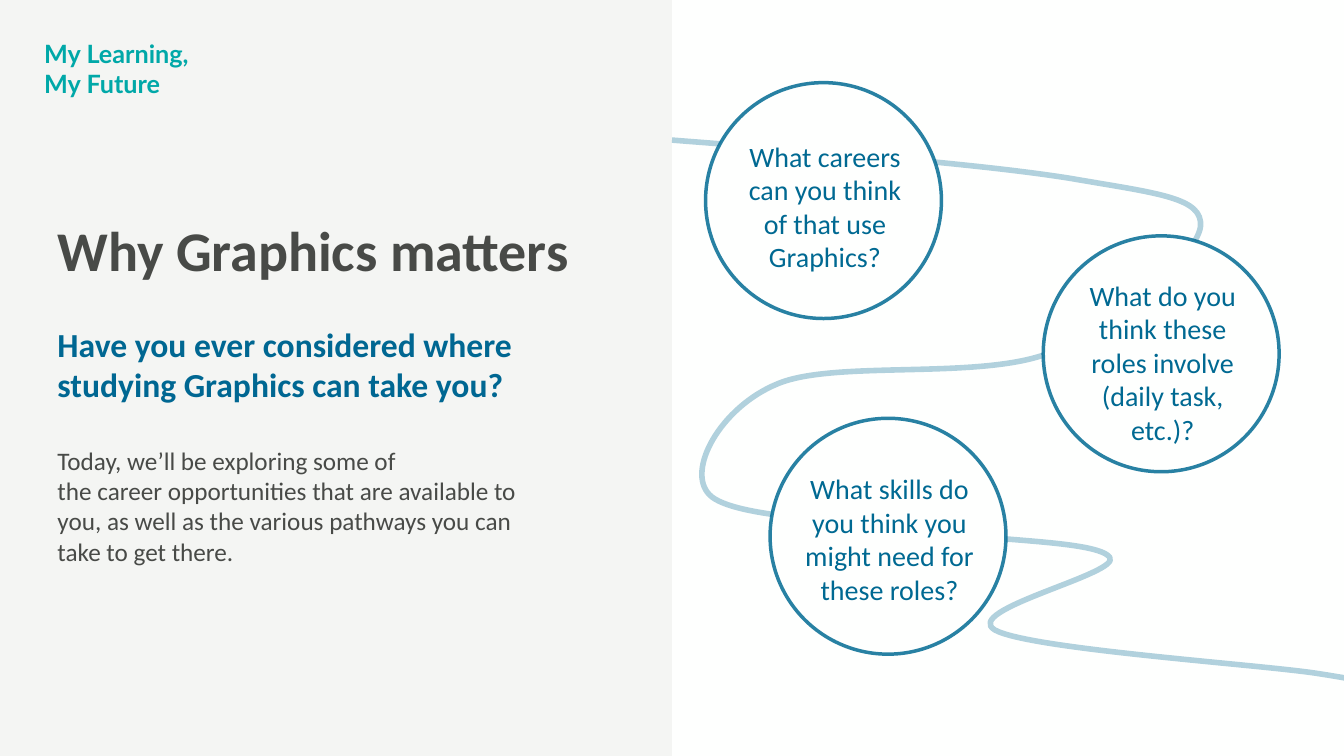
from dataclasses import dataclass

import pptx
import pptx.dml.color
import pptx.enum.shapes
import pptx.enum.text
import pptx.oxml
import pptx.oxml.ns
import pptx.util
from pptx.enum.text import PP_ALIGN


@dataclass(frozen=True)
class Theme:
    paper: str = "FEFFFE"
    panel: str = "E0DEDA"
    teal: str = "00A8A8"
    blue: str = "006992"
    question: str = "006792"
    ink: str = "484A47"
    heading_font: str = "Lato"
    text_font: str = "Calibri"
    title_size: float = 40
    question_size: float = 24
    prompt_size: float = 20
    text_size: float = 18
    body_gap: float = 29.3
    path_width: float = 4
    ring_width: float = 2.5


@dataclass(frozen=True)
class Area:
    """A place on the grid, in columns and rows."""
    left: float
    top: float
    width: float
    height: float


@dataclass(frozen=True)
class Prompt:
    text: str
    ring: Area
    label: Area


@dataclass(frozen=True)
class Bend:
    """A cubic curve: two handles and the end point, as (column, row)."""
    first: tuple[float, float]
    second: tuple[float, float]
    end: tuple[float, float]


THEME = Theme()
COLUMNS, ROWS = 160, 90
CELL = pptx.util.Inches(7.5) / ROWS
RING = 28.08

PROMPTS = [
    Prompt("What careers can you think of that use Graphics?",
           Area(84, 9.84, RING, RING), Area(87.72, 15.96, 21, 17.4)),
    Prompt("What do you think these roles involve (daily task, etc.)?",
           Area(124.2, 28.08, RING, RING), Area(126, 32.52, 24.84, 21.36)),
    Prompt("What skills do you think you might need for these roles?",
           Area(91.68, 49.8, RING, RING), Area(94.32, 55.56, 23.16, 17.4)),
]

PATH_START = (80, 16.68)
BENDS = [
    Bend((98.52, 18.12), (117, 19.56), (127.44, 21.24)),
    Bend((137.88, 23.04), (143.28, 23.52), (142.92, 27)),
    Bend((142.44, 30.48), (133.08, 39), (124.68, 42.12)),
    Bend((116.28, 45.24), (99.24, 42.84), (92.52, 45.72)),
    Bend((85.8, 48.48), (81.6, 56.04), (84.48, 58.92)),
    Bend((87.36, 61.8), (101.88, 61.92), (109.92, 63.12)),
    Bend((117.84, 64.44), (130.68, 64.32), (132.12, 66.36)),
    Bend((133.56, 68.28), (114.36, 72.6), (118.44, 75)),
    Bend((122.52, 77.28), (149.64, 79.08), (156.72, 80.16)),
    Bend((163.8, 81.24), (162.48, 81.36), (161.04, 81.48)),
]


def cells(count: float) -> int:
    return round(count * CELL)


def box(area: Area) -> tuple[int, int, int, int]:
    return cells(area.left), cells(area.top), cells(area.width), cells(area.height)


def rgb(colour: str) -> pptx.dml.color.RGBColor:
    return pptx.dml.color.RGBColor.from_string(colour)


def add_child(parent, tag: str, **attributes: object):
    child = pptx.oxml.ns.qn(tag)
    element = parent.makeelement(child, {key: str(value) for key, value in attributes.items()})
    parent.append(element)
    return element


def set_opacity(shape, percent: int) -> None:
    for colour in shape.element.xpath("./p:spPr//a:srgbClr"):
        if shape.element.xpath("./p:spPr/a:ln") and colour.getparent().getparent().tag != pptx.oxml.ns.qn("a:ln"):
            continue
        add_child(colour, "a:alpha", val=percent * 1000)


def set_line(shape, width: float, opacity: int) -> None:
    shape.line.color.rgb = rgb(THEME.blue)
    shape.line.width = pptx.util.Pt(width)
    set_opacity(shape, opacity)


def write(paragraph, text: str, size: float, colour: str, bold: bool = False,
          font: str = THEME.text_font, align: PP_ALIGN = PP_ALIGN.LEFT) -> None:
    paragraph.alignment = align
    for number, line in enumerate(text.split("\n")):
        if number:
            paragraph.add_line_break()
        run = paragraph.add_run()
        run.text = line
        run.font.name = font
        run.font.size = pptx.util.Pt(size)
        run.font.bold = bold
        run.font.color.rgb = rgb(colour)


def prepare_frame(shape, area: Area):
    shape.left, shape.top, shape.width, shape.height = box(area)
    frame = shape.text_frame
    frame.word_wrap = True
    frame.auto_size = pptx.enum.text.MSO_AUTO_SIZE.SHAPE_TO_FIT_TEXT
    frame.vertical_anchor = pptx.enum.text.MSO_ANCHOR.TOP
    return frame


def add_label(slide, area: Area):
    return prepare_frame(slide.shapes.add_textbox(*box(area)), area)


def drop_bullet(paragraph, gap: float = 0) -> None:
    properties = paragraph._p.get_or_add_pPr()
    properties.set("marL", "0")
    properties.set("indent", "0")
    add_child(properties, "a:buNone")
    paragraph.space_before = pptx.util.Pt(gap)


def add_winding_path(slide) -> None:
    builder = slide.shapes.build_freeform(*map(cells, PATH_START))
    builder.add_line_segments([tuple(map(cells, bend.end)) for bend in BENDS], close=False)
    winding = builder.convert_to_shape()
    winding.shadow.inherit = False
    winding.fill.background()
    # Turn each straight segment into its cubic curve
    for segment, bend in zip(winding.element.xpath(".//a:lnTo"), BENDS):
        curve = add_child(segment.getparent(), "a:cubicBezTo")
        for column, row in (bend.first, bend.second, bend.end):
            add_child(curve, "a:pt", x=cells(column) - winding.left, y=cells(row) - winding.top)
        segment.getparent().replace(segment, curve)
    set_line(winding, THEME.path_width, 30)


def add_prompt(slide, prompt: Prompt) -> None:
    ring = slide.shapes.add_shape(pptx.enum.shapes.MSO_SHAPE.OVAL, *box(prompt.ring))
    ring.shadow.inherit = False
    ring.fill.solid()
    ring.fill.fore_color.rgb = rgb(THEME.paper)
    set_line(ring, THEME.ring_width, 84)
    label = add_label(slide, prompt.label)
    write(label.paragraphs[0], prompt.text, THEME.prompt_size, THEME.blue, align=PP_ALIGN.CENTER)


def main() -> None:
    deck = pptx.Presentation()
    deck.slide_width, deck.slide_height = cells(COLUMNS), cells(ROWS)
    slide = deck.slides.add_slide(deck.slide_layouts[1])
    slide.background.fill.solid()
    slide.background.fill.fore_color.rgb = rgb(THEME.paper)

    # Left panel, behind the placeholders
    panel = slide.shapes.add_shape(pptx.enum.shapes.MSO_SHAPE.RECTANGLE, *box(Area(0, 0, COLUMNS / 2, ROWS)))
    panel.shadow.inherit = False
    panel.fill.solid()
    panel.fill.fore_color.rgb = rgb(THEME.panel)
    set_opacity(panel, 30)
    panel.line.fill.background()
    panel.element.getparent().insert(2, panel.element)

    # Programme name
    programme = add_label(slide, Area(4.08, 3.96, 21.36, 8.52))
    write(programme.paragraphs[0], "My Learning,", THEME.text_size, THEME.teal, True, THEME.heading_font)
    write(programme.add_paragraph(), "My Future", THEME.text_size, THEME.teal, True, THEME.heading_font)

    # Title and introduction
    title = prepare_frame(slide.shapes.title, Area(5.64, 25.08, 68.64, 9.24))
    write(title.paragraphs[0], "Why Graphics matters", THEME.title_size, THEME.ink, True)
    intro = prepare_frame(slide.placeholders[1], Area(5.64, 37.92, 61.92, 30.24))
    question, outline = intro.paragraphs[0], intro.add_paragraph()
    drop_bullet(question)
    write(question, "Have you ever considered where studying Graphics can take you?",
          THEME.question_size, THEME.question, True)
    drop_bullet(outline, THEME.body_gap)
    write(outline, "Today, we’ll be exploring some of\nthe career opportunities that are available to you, "
          "as well as the various pathways you can take to get there.", THEME.text_size, THEME.ink)

    # Winding path with its three prompts
    add_winding_path(slide)
    for prompt in PROMPTS:
        add_prompt(slide, prompt)
    deck.save("out.pptx")


if __name__ == "__main__":
    main()
